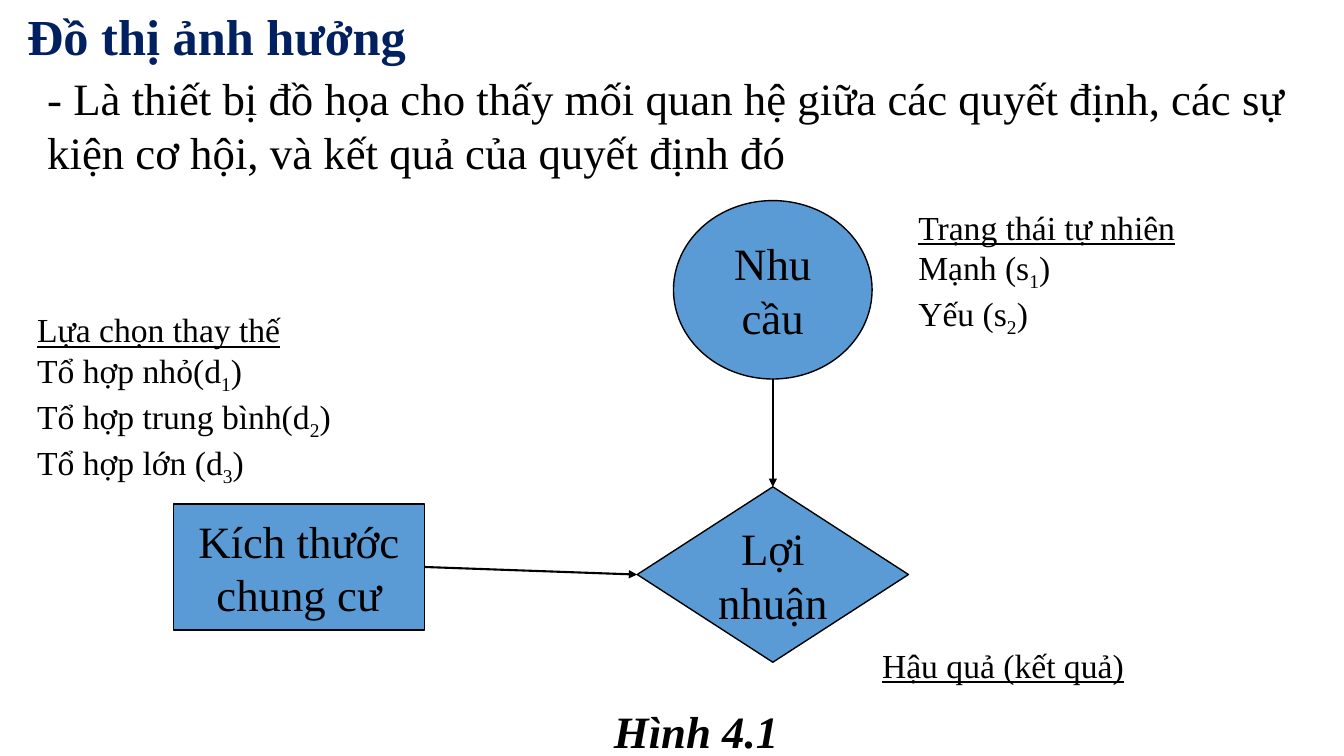
import pptx
import pptx.util
import pptx.dml.color
import pptx.enum.shapes
import pptx.enum.text
import pptx.oxml
import pptx.oxml.ns
from dataclasses import dataclass
from pptx.util import Inches


@dataclass(frozen=True)
class Theme:
    font: str = "Times New Roman"
    navy: str = "002060"
    black: str = "000000"
    blue: str = "5B9BD5"
    title: int = 36
    body: int = 32
    label: int = 24
    outline: float = 1
    arrow: float = 1.5


THEME = Theme()
SHAPE = pptx.enum.shapes.MSO_SHAPE


def rgb(value):
    return pptx.dml.color.RGBColor.from_string(value)


def add_run(p, text, size=THEME.body, color=THEME.black, bold=False,
            italic=False, underline=False, subscript=False):
    r = p.add_run()
    r.text = text
    f = r.font
    f.name, f.size, f.color.rgb = THEME.font, pptx.util.Pt(size), rgb(color)
    f.bold, f.italic, f.underline = bold, italic, underline
    if subscript:
        r._r.get_or_add_rPr().set("baseline", "-25000")


def add_text(s, x, y, w, h, text, wrap=False, **fmt):
    tf = s.shapes.add_textbox(Inches(x), Inches(y), Inches(w), Inches(h)).text_frame
    tf.word_wrap = wrap
    tf.auto_size = pptx.enum.text.MSO_AUTO_SIZE.SHAPE_TO_FIT_TEXT
    add_run(tf.paragraphs[0], text, **fmt)
    return tf


def add_list(s, x, y, w, h, heading, symbol, items, wrap=False):
    """Underlined heading, then one line per item with its numbered symbol."""
    tf = add_text(s, x, y, w, h, heading, wrap, size=THEME.label, underline=True)
    for number, item in enumerate(items, 1):
        p = tf.add_paragraph()
        add_run(p, f"{item}({symbol}", size=THEME.label)
        add_run(p, str(number), size=THEME.label, subscript=True)
        add_run(p, ")", size=THEME.label)


def add_node(s, kind, x, y, w, h, text):
    sp = s.shapes.add_shape(kind, Inches(x), Inches(y), Inches(w), Inches(h))
    sp.shadow.inherit = False
    sp.fill.solid()
    sp.fill.fore_color.rgb = rgb(THEME.blue)
    sp.line.color.rgb = rgb(THEME.black)
    sp.line.width = pptx.util.Pt(THEME.outline)
    tf = sp.text_frame
    tf.word_wrap = True
    tf.vertical_anchor = pptx.enum.text.MSO_ANCHOR.MIDDLE
    p = tf.paragraphs[0]
    p.alignment = pptx.enum.text.PP_ALIGN.CENTER
    add_run(p, text)
    return sp


def add_arrow(s, start, end):
    cxn = s.shapes.add_connector(
        pptx.enum.shapes.MSO_CONNECTOR.STRAIGHT, *start, *end)
    cxn.line.color.rgb = rgb(THEME.black)
    cxn.line.width = pptx.util.Pt(THEME.arrow)
    ns = pptx.oxml.ns.nsdecls("a")
    cxn.line._get_or_add_ln().append(
        pptx.oxml.parse_xml(f'<a:tailEnd {ns} type="triangle"/>'))
    cxn._element.spPr.append(pptx.oxml.parse_xml(f"<a:effectLst {ns}/>"))


def mid_x(sp):
    return sp.left + sp.width // 2


def mid_y(sp):
    return sp.top + sp.height // 2


def main():
    prs = pptx.Presentation()
    prs.slide_width, prs.slide_height = Inches(13.33), Inches(7.5)
    s = prs.slides.add_slide(prs.slide_layouts[6])

    # Title, definition and caption
    add_text(s, 0.17, 0, 4, 0.71, "Đồ thị ảnh hưởng",
             size=THEME.title, color=THEME.navy, bold=True)
    add_text(s, 0.37, 0.65, 13.07, 1.18,
             "- Là thiết bị đồ họa cho thấy mối quan hệ giữa các quyết định, "
             "các sự kiện cơ hội, và kết quả của quyết định đó", wrap=True)
    add_text(s, 5.99, 6.93, 1.85, 0.64, "Hình 4.1", bold=True, italic=True)

    # Influence diagram
    demand = add_node(s, SHAPE.OVAL, 6.68, 1.99, 1.97, 1.77, "Nhu cầu")
    profit = add_node(s, SHAPE.DIAMOND, 6.32, 4.83, 2.69, 1.74, "Lợi nhuận")
    size = add_node(s, SHAPE.RECTANGLE, 1.72, 5, 2.49, 1.25, "Kích thước chung cư")
    add_arrow(s, (mid_x(profit), demand.top + demand.height),
              (mid_x(profit), profit.top))
    add_arrow(s, (size.left + size.width, mid_y(size)),
              (profit.left, mid_y(profit)))

    # Labels beside the nodes
    add_list(s, 9.01, 2, 2.77, 1.31, "Trạng thái tự nhiên", "s",
             ["Mạnh ", "Yếu "])
    add_text(s, 8.65, 6.35, 2.62, 0.5, "Hậu quả (kết quả)",
             size=THEME.label, underline=True)
    add_list(s, 0.27, 3.02, 3.51, 1.72, "Lựa chọn thay thế", "d",
             ["Tổ hợp nhỏ", "Tổ hợp trung bình", "Tổ hợp lớn "], wrap=True)

    prs.save("out.pptx")


if __name__ == "__main__":
    main()
